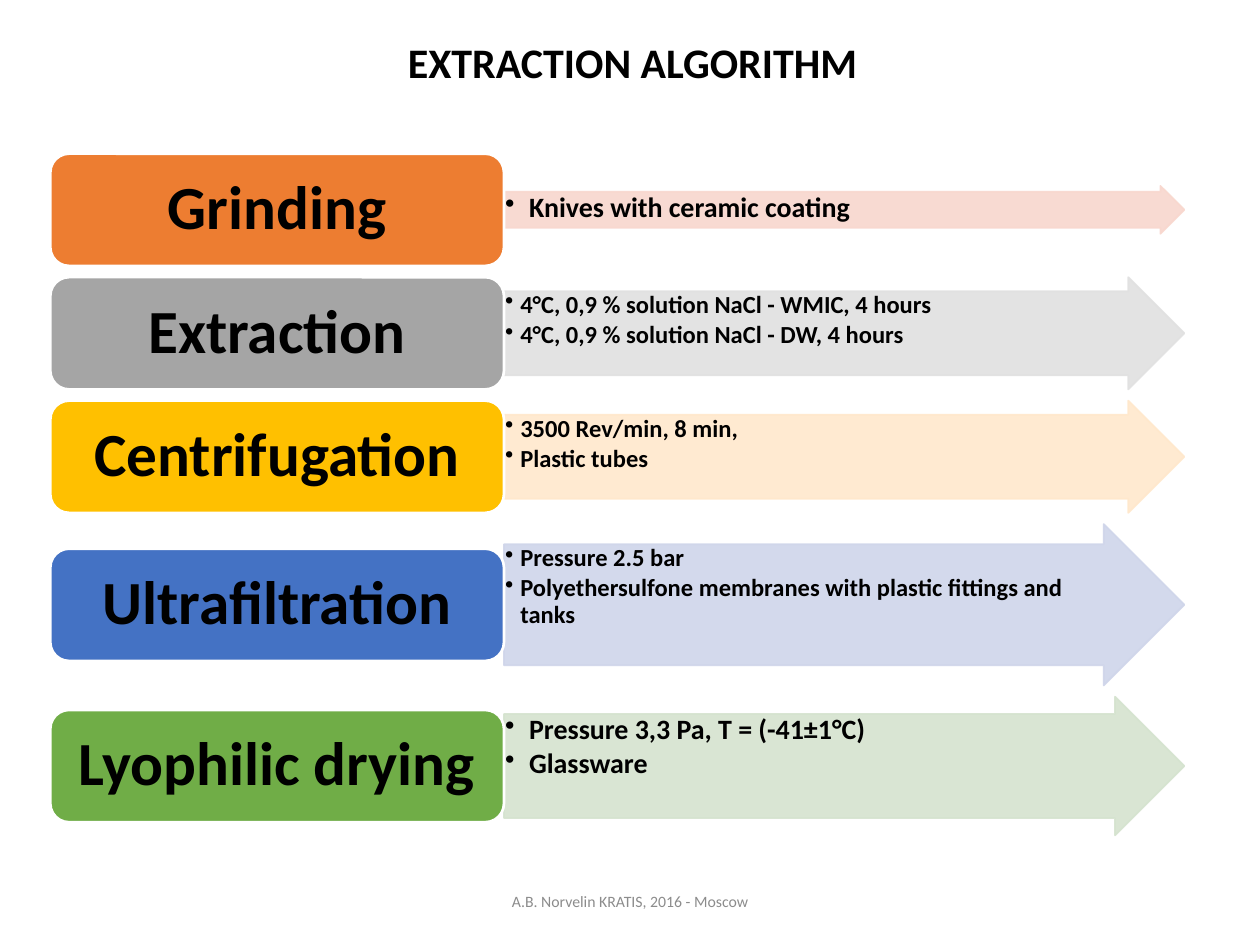
from pptx import Presentation
from pptx.dml.color import RGBColor
from pptx.enum.shapes import MSO_SHAPE
from pptx.enum.text import MSO_ANCHOR, PP_ALIGN
from pptx.oxml.ns import qn
from pptx.util import Inches, Pt
from lxml.etree import SubElement

COLORS = {
    "text": "000000", "footer": "8C8C8C", "outline": "FFFFFF",
    "orange": "ED7D31", "pale orange": "F8D7CE",
    "gray": "A5A5A5", "pale gray": "E1E1E1",
    "yellow": "FFC000", "pale yellow": "FFE8CC",
    "blue": "4472C4", "pale blue": "CFD5EA",
    "green": "70AD47", "pale green": "D5E3CF",
}
# step, colour, arrow height, text size, bullet indent, details
STEPS = [
    ("Grinding", "orange", 0.38, 16, 0.19, ["Knives with ceramic coating"]),
    ("Extraction", "gray", 0.89, 14, 0.12,
     ["4°С, 0,9 % solution NaCl - WMIC, 4 hours",
      "4°С, 0,9 % solution NaCl - DW, 4 hours"]),
    ("Centrifugation", "yellow", 0.89, 14, 0.12,
     ["3500 Rev/min, 8 min,", "Plastic tubes"]),
    ("Ultrafiltration", "blue", 1.28, 14, 0.12,
     ["Pressure 2.5 bar",
      "Polyethersulfone membranes with plastic fittings and tanks"]),
    ("Lyophilic drying", "green", 1.1, 16, 0.19,
     ["Pressure 3,3 Pa, Т = (-41±1°С)", "Glassware"]),
]
LABEL_WIDTH, LABEL_HEIGHT = 3.6, 0.89
ROW_GAP = 0.09
ARROW_OPACITY = 90


def rgb(color):
    return RGBColor.from_string(COLORS[color])


def set_text(frame, lines, size, color="text", bold=True, anchor=MSO_ANCHOR.MIDDLE,
             align=PP_ALIGN.CENTER, margins=None, paragraph_format=None):
    frame_format = {"word_wrap": True, "vertical_anchor": anchor, **(margins or {})}
    for key, value in frame_format.items():
        setattr(frame, key, value)
    for index, line in enumerate(lines):
        paragraph = frame.add_paragraph() if index else frame.paragraphs[0]
        for key, value in {"alignment": align, **(paragraph_format or {})}.items():
            setattr(paragraph, key, value)
        run = paragraph.add_run()
        run.text = line
        for key, value in {"name": "Calibri", "size": Pt(size), "bold": bold}.items():
            setattr(run.font, key, value)
        run.font.color.rgb = rgb(color)


def add_bullets(frame, indent):
    for paragraph in frame.paragraphs:
        properties = paragraph._p.get_or_add_pPr()
        properties.set("marL", str(Inches(indent)))
        properties.set("indent", str(-Inches(indent)))
        SubElement(properties, qn("a:buChar")).set("char", "•")


def add_filled_shape(slide, preset, box, fill, line, line_width):
    shape = slide.shapes.add_shape(preset, *map(Inches, box))
    shape.shadow.inherit = False
    shape.fill.solid()
    shape.fill.fore_color.rgb = rgb(fill)
    shape.line.color.rgb = rgb(line)
    shape.line.width = Pt(line_width)
    return shape


def add_caption(slide, box, text, size, **text_format):
    caption = slide.shapes.add_textbox(*map(Inches, box))
    set_text(caption.text_frame, [text], size, **text_format)


def add_detail_arrow(slide, box, color, size, indent, details):
    arrow = add_filled_shape(slide, MSO_SHAPE.RIGHT_ARROW, box, color, color, 1)
    arrow.adjustments[0], arrow.adjustments[1] = 0.75, 0.5
    for color_element in arrow._element.spPr.iter(qn("a:srgbClr")):
        SubElement(color_element, qn("a:alpha")).set("val", str(ARROW_OPACITY * 1000))
    margins = {f"margin_{side}": Inches(0.01) for side in ("left", "top", "bottom")}
    # Keeps the text clear of the arrow's tip
    margins["margin_right"] = Inches(0.01 + box[3] / 8)
    set_text(arrow.text_frame, details, size, anchor=MSO_ANCHOR.TOP,
             align=PP_ALIGN.LEFT, margins=margins,
             paragraph_format={"line_spacing": 0.9, "space_after": Pt(size * 0.15)})
    add_bullets(arrow.text_frame, indent)


def add_step_label(slide, box, color, step):
    label = add_filled_shape(slide, MSO_SHAPE.ROUNDED_RECTANGLE, box, color, "outline", 1.5)
    margins = {"margin_left": Inches(0.15), "margin_right": Inches(0.15),
               "margin_top": Inches(0.07), "margin_bottom": Inches(0.07)}
    set_text(label.text_frame, [step], 35, margins=margins,
             paragraph_format={"line_spacing": 0.9})


def add_step_list(slide, left, top, width):
    """Stack the steps, each row as tall as its label or arrow."""
    for step, color, arrow_height, size, indent, details in STEPS:
        row_height = max(LABEL_HEIGHT, arrow_height)
        middle = top + row_height / 2
        add_detail_arrow(slide, (left + LABEL_WIDTH, middle - arrow_height / 2,
                                 width - LABEL_WIDTH, arrow_height),
                         f"pale {color}", size, indent, details)
        add_step_label(slide, (left, middle - LABEL_HEIGHT / 2, LABEL_WIDTH, LABEL_HEIGHT),
                       color, step)
        top += row_height + ROW_GAP


def main():
    presentation = Presentation()
    presentation.slide_width, presentation.slide_height = Inches(10), Inches(7.5)
    slide = presentation.slides.add_slide(presentation.slide_layouts[6])
    add_caption(slide, (0.2, 0.24, 9.64, 0.5), "EXTRACTION ALGORITHM", 24,
                anchor=MSO_ANCHOR.TOP)
    add_step_list(slide, 0.4, 1.22, 9)
    add_caption(slide, (3.31, 6.95, 3.38, 0.4), "A.B. Norvelin KRATIS, 2016 - Moscow", 9,
                color="footer", bold=False)
    presentation.save("out.pptx")


if __name__ == "__main__":
    main()
